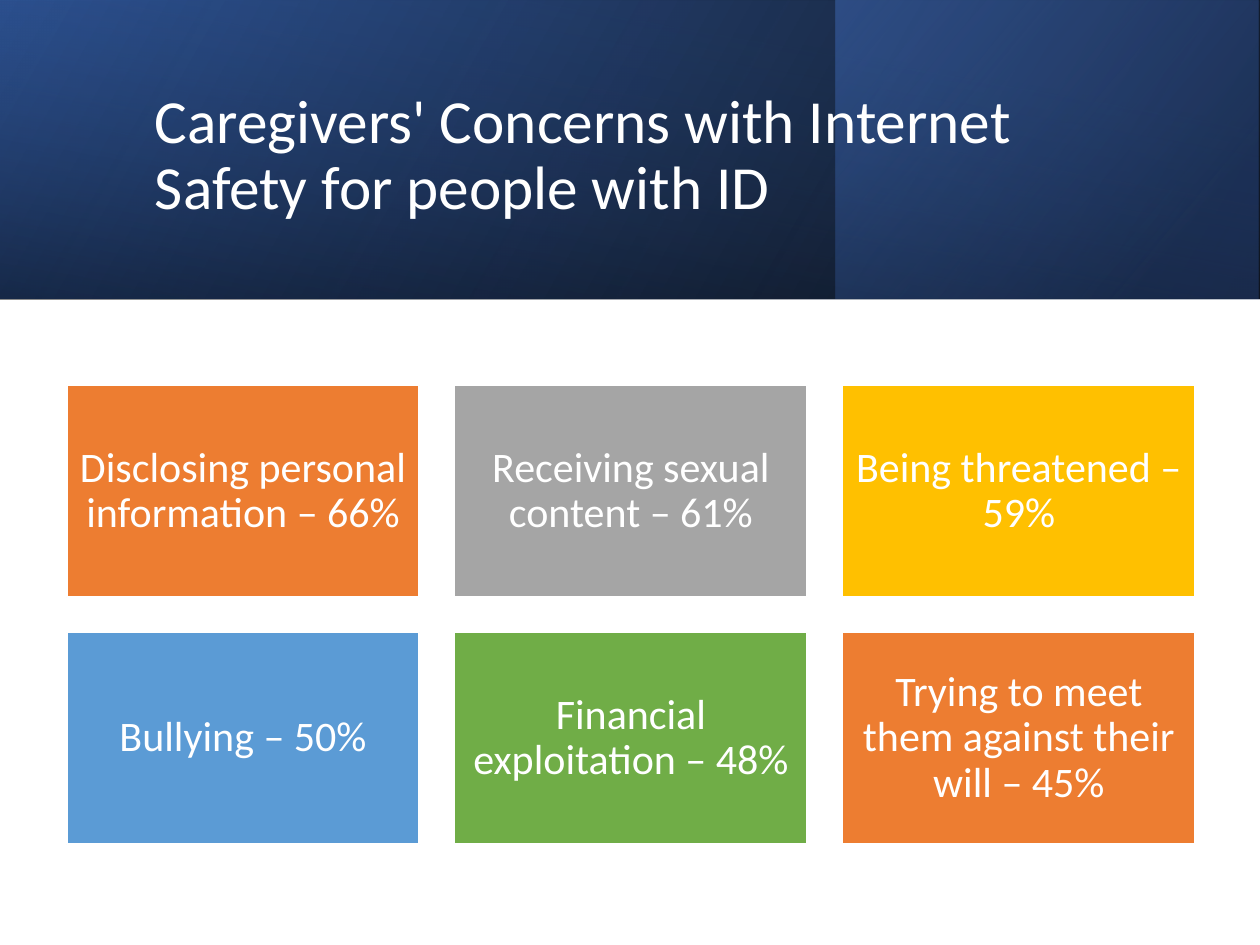
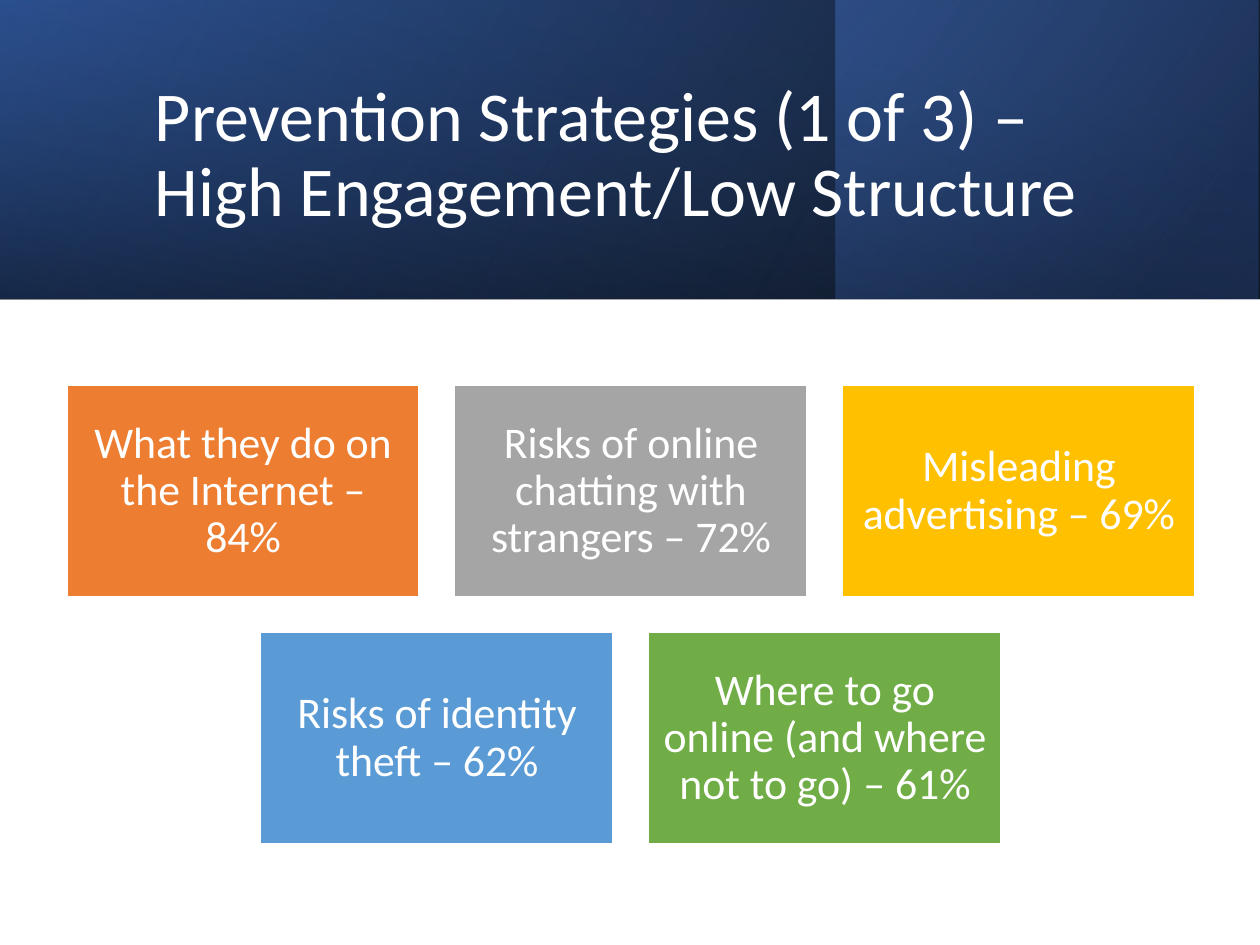
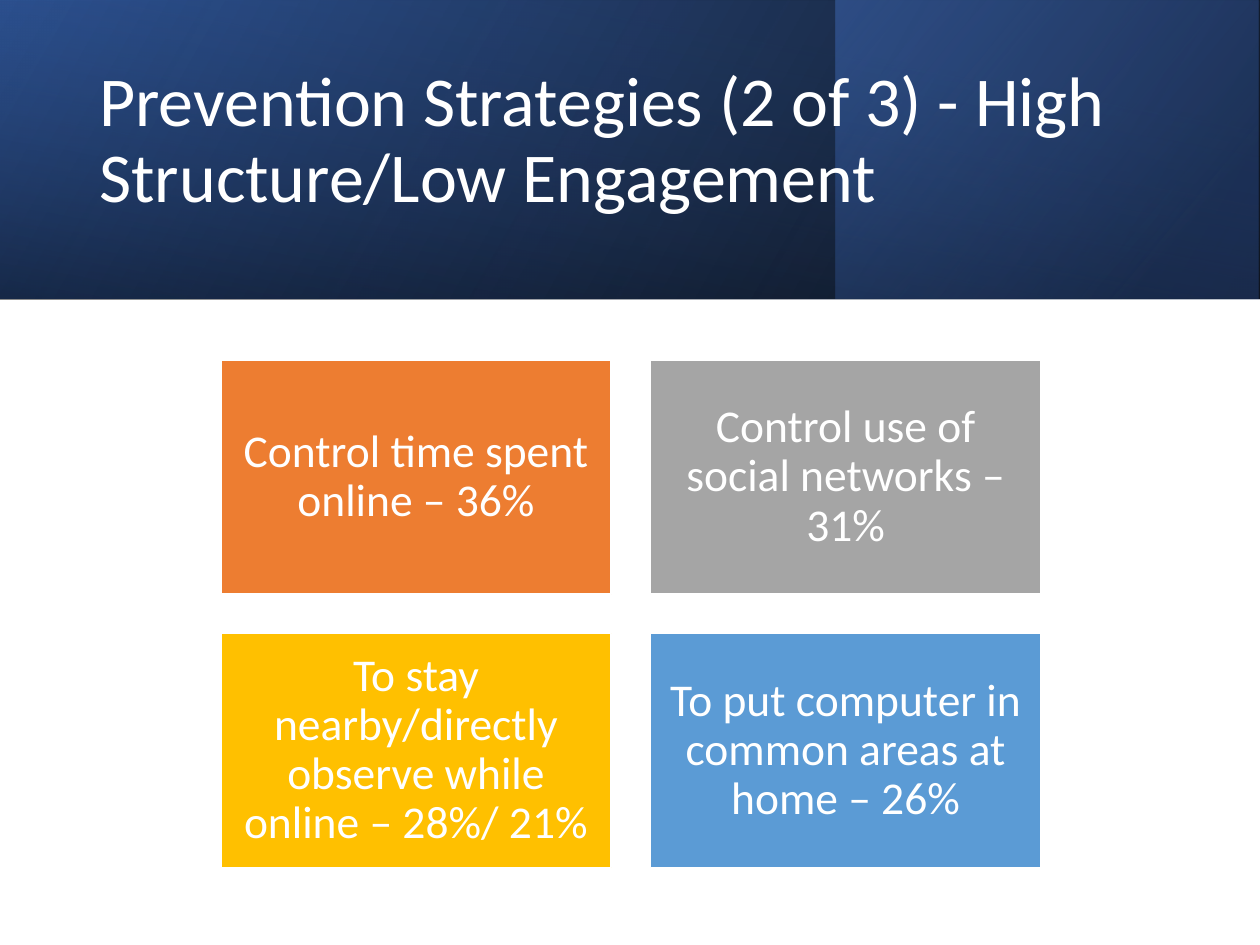
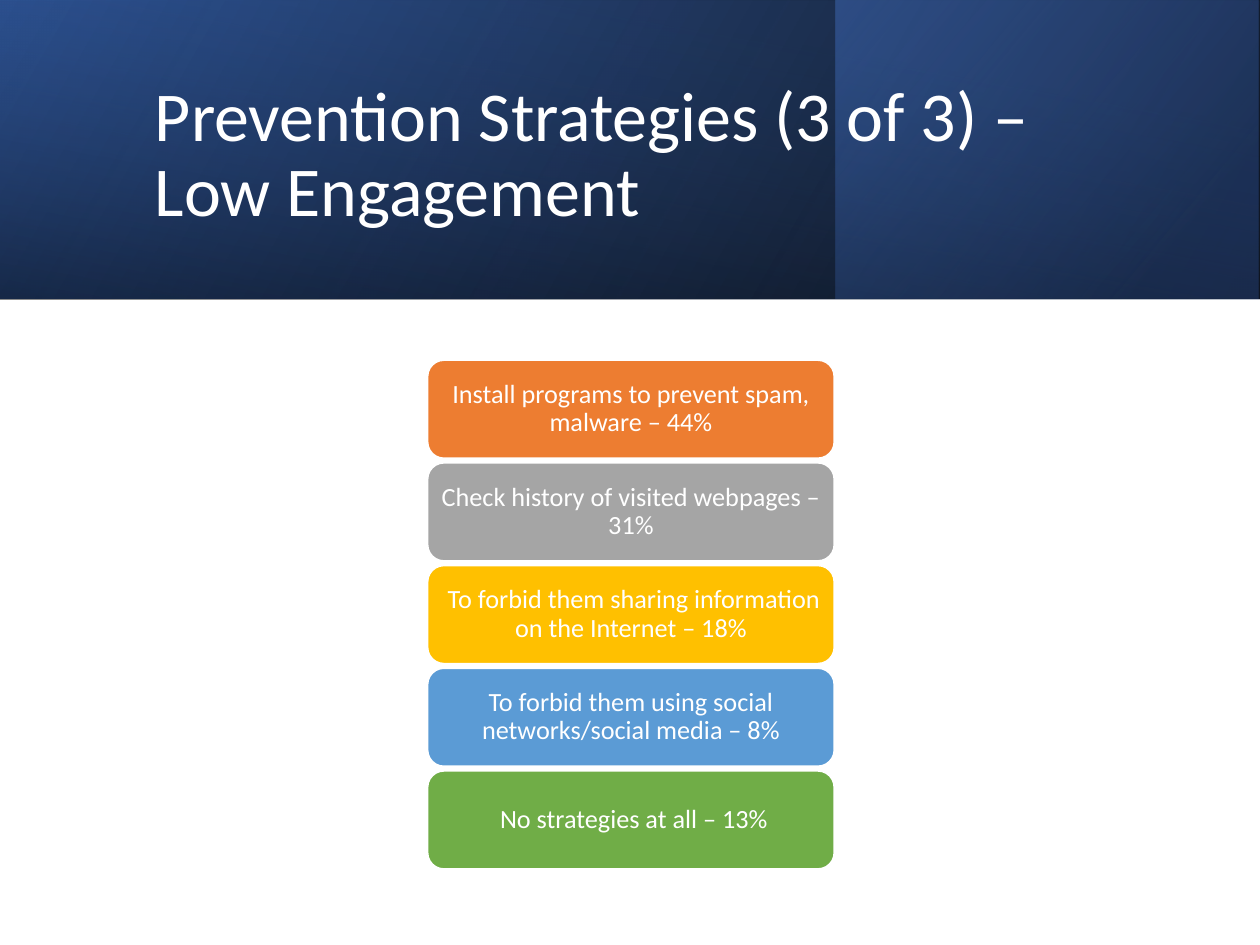
"""Build four slides on internet safety concerns and prevention strategies."""
from lxml.etree import SubElement
from pptx import Presentation
from pptx.dml.color import RGBColor
from pptx.enum.shapes import MSO_SHAPE as Shape
from pptx.enum.text import MSO_ANCHOR as Anchor, MSO_AUTO_SIZE as AutoSize, PP_ALIGN as Align
from pptx.oxml.ns import qn
from pptx.util import Cm, Pt

FONT = "Calibri"
WHITE = RGBColor(0xFF, 0xFF, 0xFF)
BLACK = RGBColor(0x00, 0x00, 0x00)
BLUE = RGBColor(0x2F, 0x55, 0x97)
NAVY = RGBColor(0x20, 0x38, 0x64)
BRIGHT_BLUE = RGBColor(0x44, 0x72, 0xC4)
ORANGE = RGBColor(0xED, 0x7D, 0x31)
GRAY = RGBColor(0xA5, 0xA5, 0xA5)
GOLD = RGBColor(0xFF, 0xC0, 0x00)
SKY = RGBColor(0x5B, 0x9B, 0xD5)
GREEN = RGBColor(0x70, 0xAD, 0x47)
CARD_COLORS = [ORANGE, GRAY, GOLD, SKY, GREEN]
CARDS_CENTER = 12.72

# box, rotation, clockwise gradient angle, stops of (position, color, opacity)
BANDS = [
    ((0, 0, 25.4, 6.02), 0, 330, [(0, BLACK, 96), (100, BLUE, 100)]),
    ((16.84, 0, 8.53, 6.02), 0, 320, [(19, NAVY, 68), (100, BRIGHT_BLUE, 48)]),
    ((9.68, -9.68, 6.02, 25.4), 270, 350, [(23, BLUE, 16), (99, BLACK, 45)]),
]
TITLE_BOX = (2.87, 0.97, 20.24, 4.37)
WIDE_TITLE_BOX = (1.75, 1.02, 21.9, 3.68)

THREE_COLUMNS = dict(shape=Shape.RECTANGLE, columns=3, top=7.77, width=7.11,
                     height=4.27, gap=0.71, insets=(0.25, 0.25))
TWO_COLUMNS = dict(shape=Shape.RECTANGLE, columns=2, top=7.26, width=7.87,
                   height=4.72, gap=0.79, insets=(0.28, 0.28))
STACK = dict(shape=Shape.ROUNDED_RECTANGLE, columns=1, top=7.26, width=8.2,
             height=1.98, gap=0.09, insets=(0.15, 0.08))

SLIDES = [
    ("Caregivers' Concerns with Internet Safety for people with ID", 35, TITLE_BOX,
     THREE_COLUMNS, 24, [
         "Disclosing personal information – 66%",
         "Receiving sexual content – 61%",
         "Being threatened – 59%",
         "Bullying – 50%",
         "Financial exploitation – 48%",
         "Trying to meet them against their will – 45%"]),
    ("Prevention Strategies (1 of 3) – High Engagement/Low Structure", 40, TITLE_BOX,
     THREE_COLUMNS, 25, [
         "What they do on the Internet – 84%",
         "Risks of online chatting with strangers – 72%",
         "Misleading advertising – 69%",
         "Risks of identity theft – 62%",
         "Where to go online (and where not to go) – 61%"]),
    ("Prevention Strategies (2 of 3) - High Structure/Low Engagement", 40, WIDE_TITLE_BOX,
     TWO_COLUMNS, 26, [
         "Control time spent online – 36%",
         "Control use of social networks – 31%",
         "To stay nearby/directly observe while online – 28%/ 21%",
         "To put computer in common areas at home – 26%"]),
    ("Prevention Strategies (3 of 3) – Low Engagement", 40, TITLE_BOX,
     STACK, 15, [
         "Install programs to prevent spam, malware – 44%",
         "Check history of visited webpages – 31%",
         " To forbid them sharing information on the Internet – 18%",
         "To forbid them using social networks/social media – 8%",
         " No strategies at all – 13%"]),
]


def write_text(shape, text, size, alignment):
    """Put one white paragraph, vertically centred, into a shape."""
    frame = shape.text_frame
    frame.text = text
    frame.word_wrap = True
    frame.auto_size = AutoSize.NONE
    frame.vertical_anchor = Anchor.MIDDLE
    paragraph = frame.paragraphs[0]
    paragraph.alignment = alignment
    paragraph.line_spacing = 0.9
    paragraph.font.name = FONT
    paragraph.font.size = Pt(size)
    paragraph.font.color.rgb = WHITE


def add_band(slide, box, rotation, angle, stops):
    """Add a mirrored rectangle with a translucent two-stop gradient."""
    band = slide.shapes.add_shape(Shape.RECTANGLE, *map(Cm, box))
    band.rotation = rotation
    band.shadow.inherit = False
    band.line.fill.background()
    band.fill.gradient()
    band.fill.gradient_angle = 360 - angle
    properties = band.element.spPr
    properties.get_or_add_xfrm().set("flipH", "1")
    for gradient_stop, (position, color, opacity) in zip(band.fill.gradient_stops, stops):
        gradient_stop.position = position / 100
        gradient_stop.color.rgb = color
    for color_element, (position, color, opacity) in zip(properties.iter(qn("a:srgbClr")), stops):
        SubElement(color_element, qn("a:alpha")).set("val", str(opacity * 1000))


presentation = Presentation()
presentation.slide_width = Cm(25.4)
presentation.slide_height = Cm(19.05)
title_only = presentation.slide_layouts[5]

for title_text, title_size, title_box, grid, card_size, cards in SLIDES:
    slide = presentation.slides.add_slide(title_only)
    for band in BANDS:
        add_band(slide, *band)

    title = slide.shapes.title
    title.left, title.top, title.width, title.height = map(Cm, title_box)
    write_text(title, title_text, title_size, Align.LEFT)
    slide.shapes.element.append(title.element)

    columns, width, height, gap = (grid[key] for key in ("columns", "width", "height", "gap"))
    for index, text in enumerate(cards):
        row, column = divmod(index, columns)
        in_row = min(columns, len(cards) - row * columns)
        row_left = CARDS_CENTER - (in_row * width + (in_row - 1) * gap) / 2
        card = slide.shapes.add_shape(
            grid["shape"], Cm(row_left + column * (width + gap)),
            Cm(grid["top"] + row * (height + gap)), Cm(width), Cm(height))
        card.shadow.inherit = False
        card.fill.solid()
        card.fill.fore_color.rgb = CARD_COLORS[index % len(CARD_COLORS)]
        card.line.color.rgb = WHITE
        card.line.width = Pt(1)
        side, end = map(Cm, grid["insets"])
        frame = card.text_frame
        frame.margin_left = frame.margin_right = side
        frame.margin_top = frame.margin_bottom = end
        write_text(card, text, card_size, Align.CENTER)

presentation.save("out.pptx")
